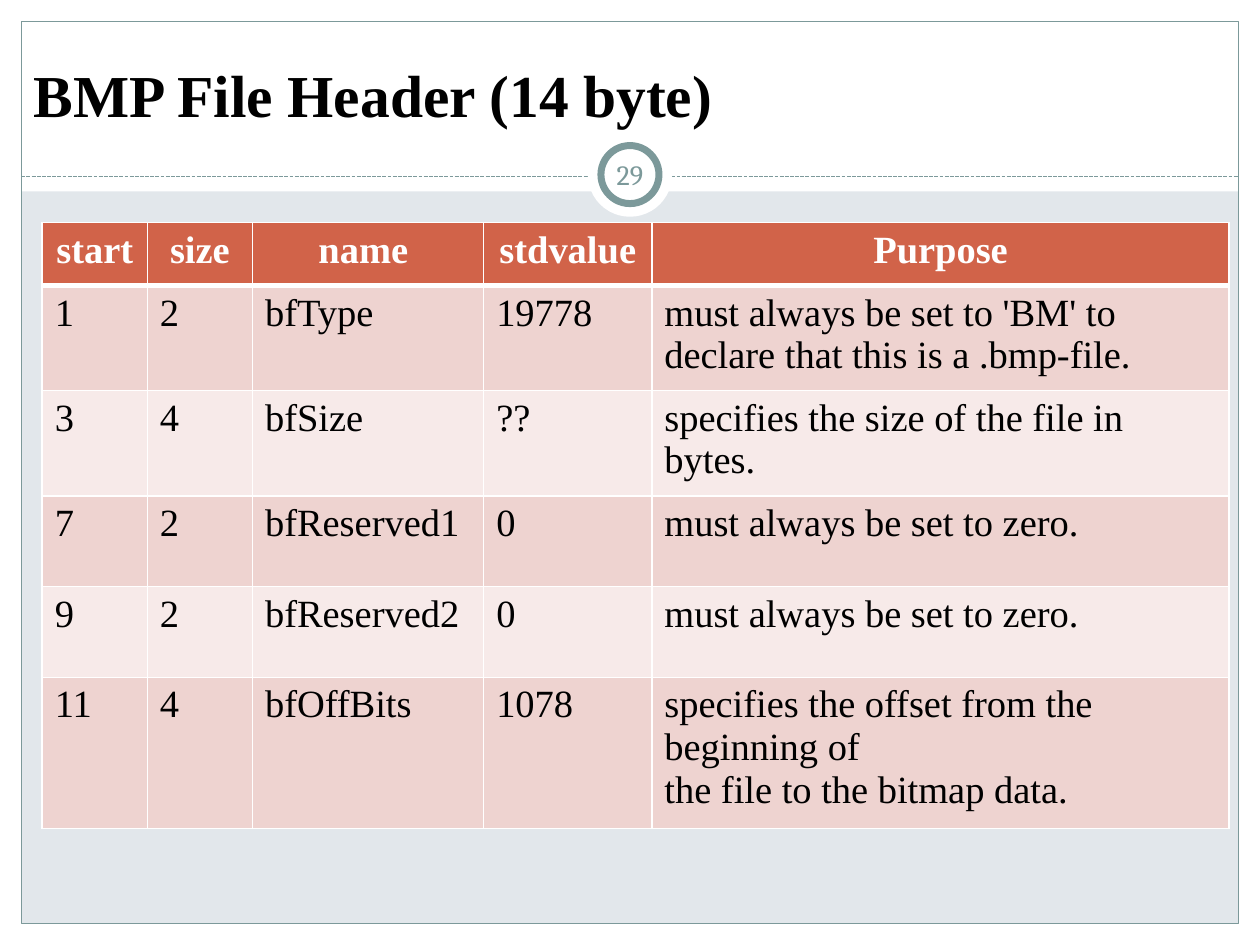
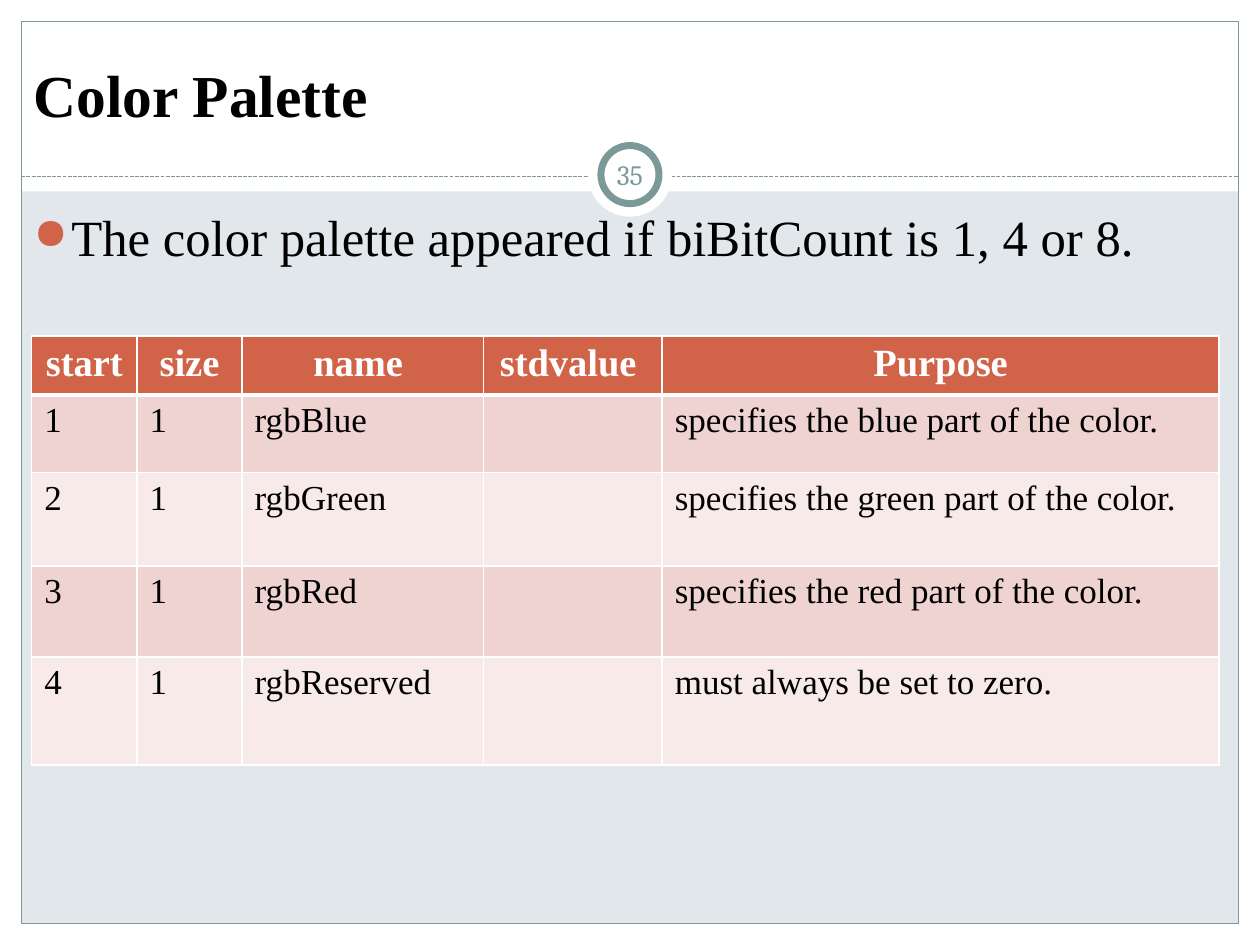
"""Build two slides that tabulate parts of the BMP file format."""
import lxml.etree
import pptx
import pptx.dml.color
import pptx.enum.dml
import pptx.enum.shapes
import pptx.enum.text
import pptx.oxml.ns
import pptx.util

Cm = pptx.util.Cm
Pt = pptx.util.Pt
RGBColor = pptx.dml.color.RGBColor
Shape = pptx.enum.shapes.MSO_SHAPE
Align = pptx.enum.text.PP_ALIGN
Anchor = pptx.enum.text.MSO_ANCHOR
qn = pptx.oxml.ns.qn

HEADINGS = ("start", "size", "name ", "stdvalue ", "Purpose")
SLIDES = [
    {
        "title": "BMP File Header (14 byte)",
        "number": "29",
        "corner": (0.85, 4.49),
        "columns": (2.12, 2.12, 4.66, 3.39, 11.64),
        "heights": (1.27, 2.11, 2.11, 1.83, 1.83, 3.05),
        "size": 22,
        "rows": [
            ("1", "2", "bfType", "19778",
             "must always be set to 'BM' to declare that this is a .bmp-file."),
            ("3", "4", "bfSize", "??", "specifies the size of the file in bytes."),
            ("7", "2", "bfReserved1", "0", "must always be set to zero."),
            ("9", "2", "bfReserved2", "0", "must always be set to zero."),
            ("11", "4", "bfOffBits", "1078",
             "specifies the offset from the beginning of\nthe file to the bitmap data."),
        ],
    },
    {
        "title": "Color Palette",
        "number": "35",
        "bullet": "The color palette appeared if biBitCount is 1, 4 or 8.",
        "corner": (0.64, 6.77),
        "columns": (2.12, 2.12, 4.87, 3.6, 11.22),
        "heights": (1.19, 1.57, 1.88, 1.83, 2.18),
        "size": 20,
        "rows": [
            ("1", "1", "rgbBlue", "", "specifies the blue part of the color."),
            ("2", "1", "rgbGreen", "", "specifies the green part of the color."),
            ("3", "1", "rgbRed", "", "specifies the red part of the color."),
            ("4", "1", "rgbReserved", "", "must always be set to zero."),
        ],
    },
]

WIDTH, HEIGHT = 25.4, 19.05
MARGIN = 0.43
BAND_HEIGHT = 3.86
RULE_TOP = 3.56
BADGE_MIDDLE = 3.52
BACKGROUND = RGBColor(0xE2, 0xE7, 0xEB)
WHITE = RGBColor(0xFF, 0xFF, 0xFF)
BLACK = RGBColor(0x00, 0x00, 0x00)
TEAL = RGBColor(0x7C, 0x99, 0x9A)
ORANGE = RGBColor(0xD1, 0x63, 0x49)
ROW_FILLS = (RGBColor(0xEE, 0xD3, 0xD0), RGBColor(0xF7, 0xEA, 0xE9))


def write(frame, text, size, color=BLACK, font="Times New Roman", bold=False,
          align=Align.LEFT, anchor=Anchor.TOP):
    """Fill a text frame, one paragraph for each line of text."""
    frame.word_wrap = True
    frame.vertical_anchor = anchor
    for index, line in enumerate(text.split("\n")):
        para = frame.add_paragraph() if index else frame.paragraphs[0]
        para.alignment = align
        span = para.add_run()
        span.text = line
        span.font.size = Pt(size)
        span.font.name = font
        span.font.bold = bold
        span.font.color.rgb = color


def add_panel(page, kind, left, top, width, height, fill=None, line=None, weight=0.75):
    """Add a plain shape with an optional fill and outline."""
    panel = page.shapes.add_shape(kind, Cm(left), Cm(top), Cm(width), Cm(height))
    panel.shadow.inherit = False
    if fill is None:
        panel.fill.background()
    else:
        panel.fill.solid()
        panel.fill.fore_color.rgb = fill
    if line is None:
        panel.line.fill.background()
    else:
        panel.line.color.rgb = line
        panel.line.width = Pt(weight)
    return panel


def add_rule(page):
    """Add the dashed line under the title."""
    rule = page.shapes.add_connector(
        pptx.enum.shapes.MSO_CONNECTOR.STRAIGHT,
        Cm(MARGIN), Cm(RULE_TOP), Cm(WIDTH - MARGIN), Cm(RULE_TOP))
    rule.line.color.rgb = TEAL
    rule.line.width = Pt(0.75)
    rule.line.dash_style = pptx.enum.dml.MSO_LINE.SQUARE_DOT
    lxml.etree.SubElement(rule.element.spPr, qn("a:effectLst"))
    return rule


def decorate(layout, page):
    """Build the shared frame on a page and move it to the layout."""
    layout.background.fill.solid()
    layout.background.fill.fore_color.rgb = BACKGROUND
    for holder in list(layout.placeholders)[1:]:
        layout.shapes.element.remove(holder.element)
    bands = [
        (0, HEIGHT - MARGIN, WIDTH, MARGIN),
        (0, 0, WIDTH, BAND_HEIGHT),
        (0, 0, MARGIN, HEIGHT),
        (WIDTH - MARGIN, 0, MARGIN, HEIGHT),
    ]
    parts = [add_panel(page, Shape.RECTANGLE, *band, fill=WHITE) for band in bands]
    parts.append(add_panel(page, Shape.RECTANGLE, MARGIN, MARGIN, WIDTH - 2 * MARGIN,
                           HEIGHT - 2 * MARGIN, line=TEAL))
    parts.append(add_rule(page))
    for diameter, line in ((1.7, None), (1.17, TEAL)):
        parts.append(add_panel(
            page, Shape.OVAL, (WIDTH - diameter) / 2, BADGE_MIDDLE - diameter / 2,
            diameter, diameter, fill=WHITE, line=line, weight=4))
    for part in parts:
        layout.shapes.element.append(part.element)


def add_title(page, text):
    """Place and fill the title placeholder."""
    title = page.shapes.title
    title.left, title.top = Cm(MARGIN), Cm(MARGIN)
    title.width, title.height = Cm(WIDTH - 2 * MARGIN), Cm(2.31)
    title.text_frame.auto_size = pptx.enum.text.MSO_AUTO_SIZE.NONE
    write(title.text_frame, text, 34, bold=True, anchor=Anchor.BOTTOM)


def add_number(page, text):
    """Write the page number in the badge."""
    width, height = 1.27, 1.22
    box = page.shapes.add_textbox(
        Cm((WIDTH - width) / 2), Cm(BADGE_MIDDLE - height / 2), Cm(width), Cm(height))
    frame = box.text_frame
    frame.margin_left = frame.margin_right = Cm(0.13)
    write(frame, text, 16, color=TEAL, font="Cambria", align=Align.CENTER,
          anchor=Anchor.MIDDLE)


def add_bullet(page, text):
    """Add the bulleted statement above the table."""
    box = page.shapes.add_textbox(Cm(MARGIN), Cm(4.02), Cm(WIDTH - 2 * MARGIN), Cm(14.6))
    write(box.text_frame, text, 29)
    para = box.text_frame.paragraphs[0]
    para.space_before = Pt(5.8)
    props = para._p.get_or_add_pPr()
    props.set("marL", str(Cm(0.76)))
    props.set("indent", str(-Cm(0.76)))
    color = lxml.etree.SubElement(props, qn("a:buClr"))
    lxml.etree.SubElement(color, qn("a:srgbClr"), val=str(ORANGE))
    lxml.etree.SubElement(props, qn("a:buSzPct"), val="85000")
    lxml.etree.SubElement(props, qn("a:buChar"), char="●")


def style_cell(cell, fill, top, bottom):
    """Give a cell white borders and a fill."""
    props = cell._tc.get_or_add_tcPr()
    for side, weight in (("L", 1), ("R", 1), ("T", top), ("B", bottom)):
        border = lxml.etree.SubElement(props, qn("a:ln" + side), w=str(Pt(weight)))
        paint = lxml.etree.SubElement(border, qn("a:solidFill"))
        lxml.etree.SubElement(paint, qn("a:srgbClr"), val=str(WHITE))
    cell.fill.solid()
    cell.fill.fore_color.rgb = fill


def add_fields(page, content):
    """Add the table of header fields."""
    rows = [HEADINGS] + content["rows"]
    columns, heights = content["columns"], content["heights"]
    left, top = content["corner"]
    table = page.shapes.add_table(
        len(rows), len(columns), Cm(left), Cm(top), Cm(sum(columns)), Cm(sum(heights))).table
    for column, width in zip(table.columns, columns):
        column.width = Cm(width)
    for index, (row, height, texts) in enumerate(zip(table.rows, heights, rows)):
        row.height = Cm(height)
        heading = index == 0
        for cell, text in zip(row.cells, texts):
            style_cell(cell, ORANGE if heading else ROW_FILLS[(index - 1) % 2],
                       top=3 if index == 1 else 1, bottom=3 if heading else 1)
            if heading:
                write(cell.text_frame, text, 22, color=WHITE, bold=True, align=Align.CENTER)
            elif text:
                write(cell.text_frame, text, content["size"])


def main():
    """Build and save the deck."""
    deck = pptx.Presentation()
    deck.slide_width, deck.slide_height = Cm(WIDTH), Cm(HEIGHT)
    layout = deck.slide_layouts[5]
    pages = [deck.slides.add_slide(layout) for _ in SLIDES]
    decorate(layout, pages[0])
    for page, content in zip(pages, SLIDES):
        add_title(page, content["title"])
        if "bullet" in content:
            add_bullet(page, content["bullet"])
        add_number(page, content["number"])
        add_fields(page, content)
    deck.save("out.pptx")


if __name__ == "__main__":
    main()
